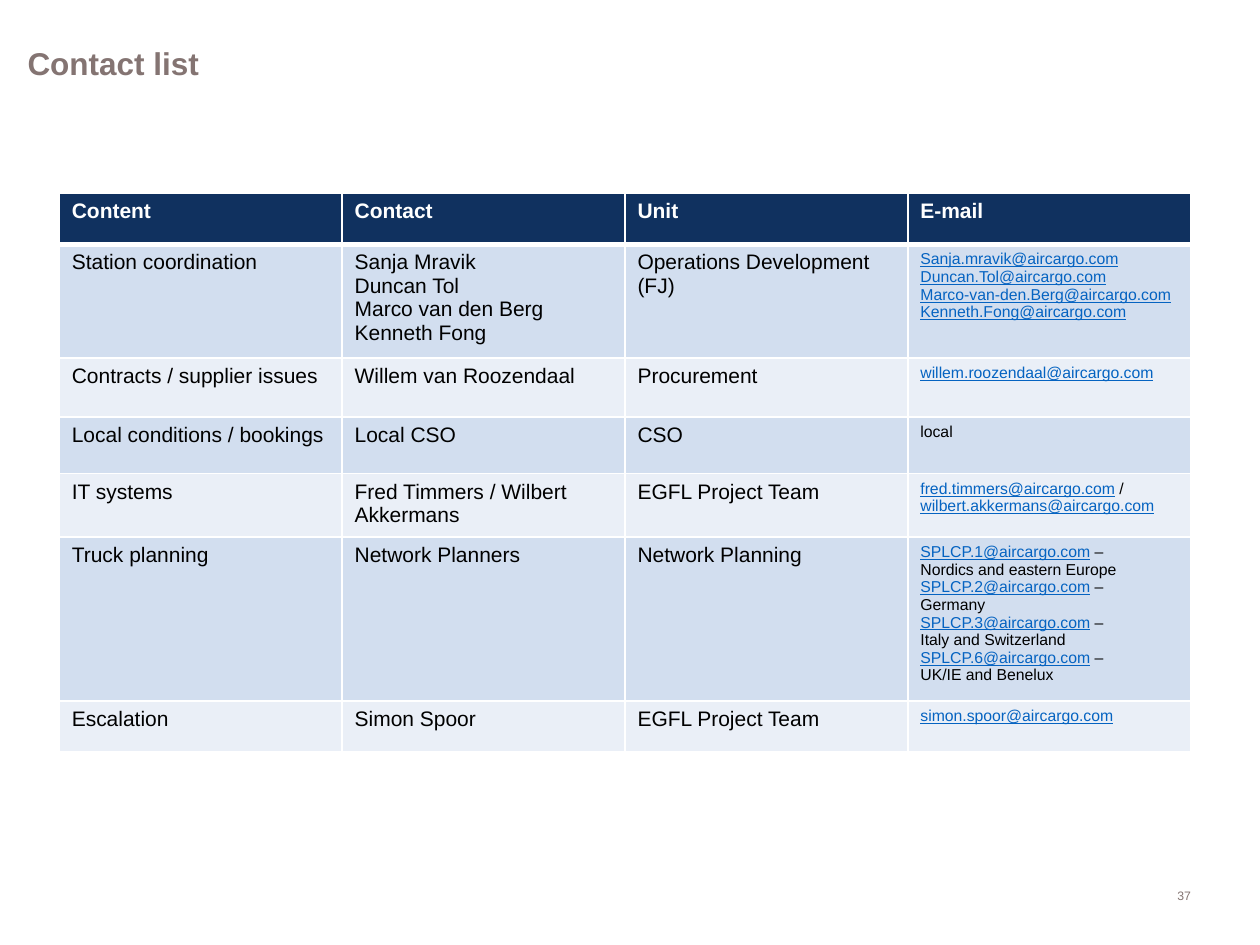
import pptx
import pptx.dml.color
import pptx.enum.text
import pptx.oxml
import pptx.oxml.ns
import pptx.util
from pptx.dml.color import RGBColor
from pptx.util import Inches

WHITE = RGBColor(0xFF, 0xFF, 0xFF)
BLACK = RGBColor(0x00, 0x00, 0x00)
TAUPE = RGBColor(0x84, 0x74, 0x72)
NAVY = RGBColor(0x10, 0x31, 0x5F)
BAND_DARK = RGBColor(0xD2, 0xDE, 0xEF)
BAND_LIGHT = RGBColor(0xEA, 0xEF, 0xF7)
LINK_BLUE = RGBColor(0x05, 0x63, 0xC1)

# Contact rows: one list per cell with several paragraphs; "|" separates runs
HEADINGS = ["Content", "Contact", "Unit", "E-mail"]
CONTACTS = [
    ["Station coordination",
     ["Sanja Mravik", "Duncan Tol", "Marco van den Berg", "Kenneth Fong"],
     "Operations Development (FJ)",
     ["Sanja.mravik@aircargo.com", "Duncan.Tol@aircargo.com",
      "Marco-van-den.Berg@aircargo.com", "Kenneth.Fong@aircargo.com"]],
    ["Contracts / supplier issues", "Willem van Roozendaal", "Procurement",
     "willem.roozendaal@aircargo.com"],
    ["Local conditions / bookings", "Local CSO", "CSO", "local"],
    ["IT systems", "Fred Timmers / Wilbert Akkermans", "EGFL Project Team",
     "fred.timmers@aircargo.com| / |wilbert.akkermans@aircargo.com"],
    ["Truck planning", "Network Planners", "Network Planning",
     ["SPLCP.1@aircargo.com| –", "Nordics and eastern Europe",
      "SPLCP.2@aircargo.com| –", "Germany",
      "SPLCP.3@aircargo.com| –", "Italy and Switzerland",
      "SPLCP.6@aircargo.com| –", "UK/IE and Benelux"]],
    ["Escalation", "Simon Spoor", "EGFL Project Team", "simon.spoor@aircargo.com"],
]
ROW_HEIGHTS = [0.41, 0.84, 0.47, 0.45, 0.47, 1.22, 0.4]
COLUMN_WIDTH = 2.245


class SlideBuilder:
    """Holds the style and the current slide."""

    font_name = "Arial"

    def __init__(self, slide):
        self.slide = slide

    def style(self, paragraph, size, color, bold=False):
        font = paragraph.font
        font.name = self.font_name
        font.size = pptx.util.Pt(size)
        font.bold = bold
        font.color.rgb = color

    def text(self, box, content, size, color, bold=False, align=None, line_spacing=None):
        shape = self.slide.shapes.add_textbox(*(Inches(length) for length in box))
        frame = shape.text_frame
        frame.word_wrap = True
        frame.vertical_anchor = pptx.enum.text.MSO_ANCHOR.MIDDLE
        paragraph = frame.paragraphs[0]
        paragraph.text = content
        paragraph.alignment = align
        paragraph.line_spacing = line_spacing
        self.style(paragraph, size, color, bold)

    def borders(self, cell, top, bottom):
        properties = cell._tc.get_or_add_tcPr()
        for side, width in (("L", 1), ("R", 1), ("T", top), ("B", bottom)):
            properties.append(pptx.oxml.parse_xml(
                f'<a:ln{side} {pptx.oxml.ns.nsdecls("a")} w="{pptx.util.Pt(width)}">'
                f'<a:solidFill><a:srgbClr val="{WHITE}"/></a:solidFill></a:ln{side}>'))

    def cell(self, cell, content, size, color, fill, bold=False, top=1, bottom=1):
        self.borders(cell, top, bottom)
        cell.fill.solid()
        cell.fill.fore_color.rgb = fill
        lines = [content] if isinstance(content, str) else content
        frame = cell.text_frame
        for index, line in enumerate(lines):
            paragraph = frame.add_paragraph() if index else frame.paragraphs[0]
            self.style(paragraph, size, color, bold)
            for part in line.split("|"):
                run = paragraph.add_run()
                run.text = part
                if "@" in part:
                    run.font.color.rgb = LINK_BLUE
                    run.font.underline = True

    def table(self, left, top, headings, records):
        frame = self.slide.shapes.add_table(
            len(ROW_HEIGHTS), len(headings), Inches(left), Inches(top),
            Inches(COLUMN_WIDTH * len(headings)), Inches(sum(ROW_HEIGHTS)))
        table = frame.table
        table.horz_banding = False
        for column in table.columns:
            column.width = Inches(COLUMN_WIDTH)
        for row, height in zip(table.rows, ROW_HEIGHTS):
            row.height = Inches(height)
        for column, heading in enumerate(headings):
            self.cell(table.cell(0, column), heading, 12, WHITE, NAVY, bold=True, bottom=3)
        for row, record in enumerate(records, start=1):
            fill = BAND_DARK if row % 2 else BAND_LIGHT
            for column, content in enumerate(record):
                size = 9 if headings[column] == "E-mail" else 12
                self.cell(table.cell(row, column), content, size, BLACK, fill,
                          top=3 if row == 1 else 1)


def main():
    presentation = pptx.Presentation()
    presentation.slide_width = Inches(10)
    presentation.slide_height = Inches(7.5)
    builder = SlideBuilder(presentation.slides.add_slide(presentation.slide_layouts[6]))

    # Title
    builder.text((0.12, 0.13, 8.62, 0.78), "Contact list", 18, TAUPE, bold=True,
                 line_spacing=0.9)

    # Contact table
    builder.table(0.47, 1.53, HEADINGS, CONTACTS)

    # Page number
    builder.text((8.74, 7, 0.81, 0.22), "37", 7, TAUPE,
                 align=pptx.enum.text.PP_ALIGN.RIGHT)

    presentation.save("out.pptx")


if __name__ == "__main__":
    main()
